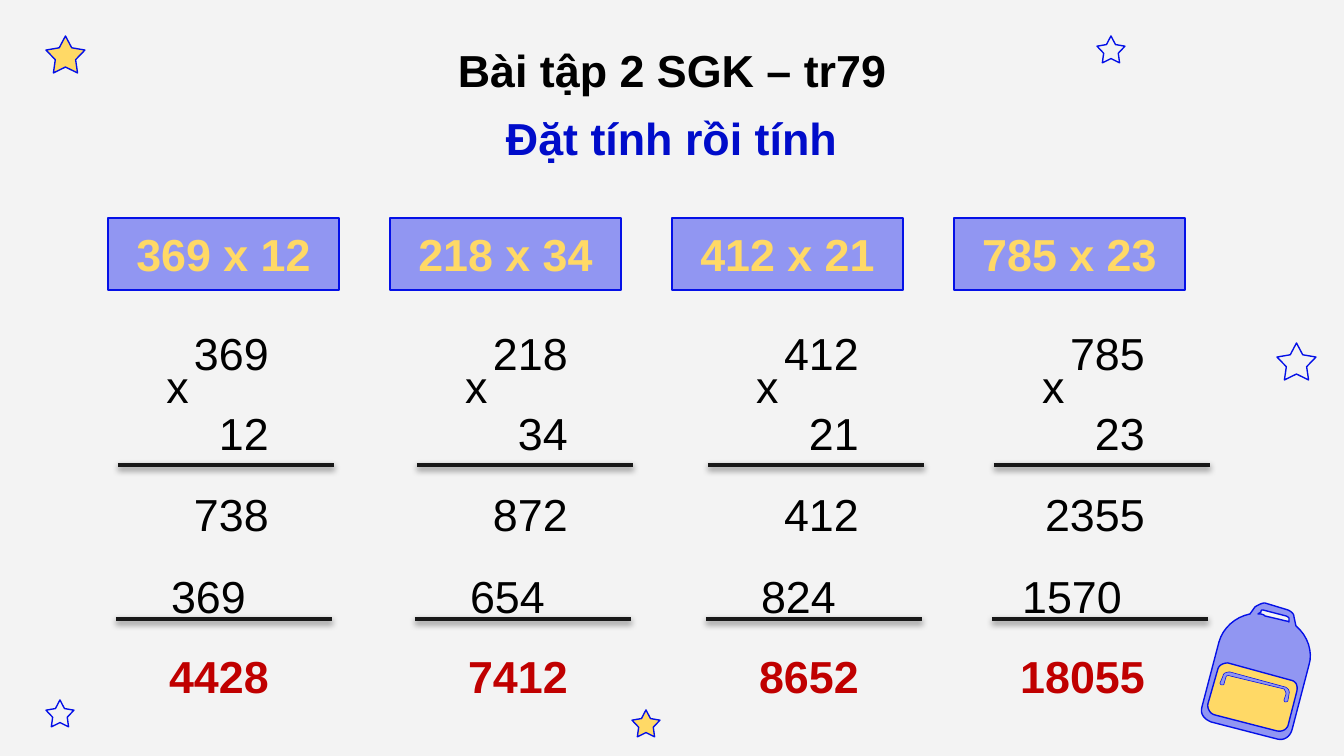
"""Build the slide that works four long multiplications in columns."""
from dataclasses import dataclass
from typing import NamedTuple

from lxml import etree
from pptx import Presentation
from pptx import util as u
from pptx.dml.color import RGBColor
from pptx.enum import shapes, text
from pptx.oxml import ns


@dataclass(frozen=True)
class Theme:
    font: str = "Arial"
    size: int = 24
    paper: str = "F3F3F3"
    ink: str = "000000"
    heading: str = "000CCA"
    outline: str = "0410E7"
    violet: str = "9196F2"
    yellow: str = "FFD966"
    rule: str = "181818"
    answer: str = "C00000"
    thin: float = 0.75
    thick: float = 2.5
    spacing: float = 1.5
    blank_row: float = 43.4


class Frame(NamedTuple):
    left: int
    top: int
    width: int
    height: int


class Star(NamedTuple):
    frame: Frame
    fill: str | None


class Problem(NamedTuple):
    left: int
    first: str
    second: str
    units: str
    tens: str
    answer: str


class Outline(NamedTuple):
    contours: list
    fill: str
    weight: float


THEME = Theme()
SLIDE = Frame(0, 0, 1344, 756)
SCALE = u.Inches(10) / SLIDE.width
CARD, CARD_STEP = Frame(108, 218, 231, 72), 282
LARGE, SMALL = (39, 37), (28, 27)
CURVE_STEPS = 8

STARS = [
    Star(Frame(46, 36, *LARGE), THEME.yellow),
    Star(Frame(46, 700, *SMALL), None),
    Star(Frame(1277, 343, *LARGE), None),
    Star(Frame(632, 710, *SMALL), THEME.yellow),
    Star(Frame(1097, 36, *SMALL), None),
]
PROBLEMS = [
    Problem(95, "369", "12", "738", "369", "4428"),
    Problem(394, "218", "34", "872", "654", "7412"),
    Problem(685, "412", "21", "412", "824", "8652"),
    Problem(971, "785", "23", "2355", "1570", "18055"),
]
HANDLE_GAP = [
    (1286, 616), (1288, 617, 1288, 617, 1289, 618), (1289, 622),
    (1288, 621, 1285, 621, 1282, 620), (1265, 616),
    (1263, 614, 1261, 614, 1258, 614), (1261, 612),
    (1261, 610, 1262, 610, 1263, 610),
]
BAG_BODY = [
    (1265, 603), (1262, 603, 1258, 605, 1255, 607), (1250, 614),
    (1235, 617, 1223, 628, 1219, 642), (1202, 707),
    (1200, 714, 1204, 719, 1211, 722), (1277, 739),
    (1284, 741, 1290, 737, 1292, 730), (1309, 665),
    (1313, 652, 1308, 636, 1296, 626), (1294, 617),
    (1294, 614, 1292, 612, 1288, 610),
]
POCKET = [
    (1228, 663), (1224, 663, 1219, 665, 1218, 669), (1208, 704),
    (1207, 708, 1210, 714, 1215, 715), (1277, 731),
    (1282, 732, 1286, 730, 1288, 726), (1297, 691),
    (1298, 685, 1296, 681, 1290, 680),
]
ZIP = [
    (1230, 672), (1227, 672, 1223, 673, 1223, 676), (1220, 683),
    (1220, 684, 1221, 685, 1222, 685), (1223, 685, 1224, 685, 1224, 684),
    (1226, 677), (1226, 676, 1228, 675, 1230, 676), (1284, 689),
    (1285, 691, 1286, 692, 1286, 694), (1284, 700),
    (1284, 701, 1285, 702, 1285, 702), (1286, 702, 1288, 702, 1288, 700),
    (1289, 694), (1290, 691, 1288, 688, 1285, 687),
]
BACKPACK = [
    Outline([HANDLE_GAP, BAG_BODY], THEME.violet, THEME.thin),
    Outline([POCKET], THEME.yellow, THEME.thin),
    Outline([ZIP], THEME.violet, 0.31),
]


def px(length: int) -> int:
    """Turn pixels into EMU."""
    return round(length * SCALE)


def emu(frame: Frame) -> list[int]:
    """Turn a frame into EMU lengths."""
    return [px(length) for length in frame]


def style(shape, fill: str | None, weight: float = THEME.thin) -> None:
    """Give a shape its fill and outline without a shadow."""
    shape.shadow.inherit = False
    if fill:
        shape.fill.solid()
        shape.fill.fore_color.rgb = RGBColor.from_string(fill)
    else:
        shape.fill.background()
    shape.line.color.rgb = RGBColor.from_string(THEME.outline)
    shape.line.width = u.Pt(weight)


def format_para(para, color: str, align, bold: bool = False) -> None:
    """Align a paragraph and format its runs."""
    para.alignment = align
    for span in para.runs:
        span.font.name, span.font.size = THEME.font, u.Pt(THEME.size)
        span.font.bold = bold
        span.font.color.rgb = RGBColor.from_string(color)


def write_heading(box, frame: Frame, words: str, color: str) -> None:
    """Place a centred bold heading."""
    box.left, box.top, box.width, box.height = emu(frame)
    box.text_frame.text = words
    box.text_frame.word_wrap = False
    box.text_frame.auto_size = text.MSO_AUTO_SIZE.NONE
    box.text_frame.vertical_anchor = text.MSO_ANCHOR.TOP
    format_para(box.text_frame.paragraphs[0], color, text.PP_ALIGN.CENTER, True)


def add_figures(slide, frame: Frame, rows: list[str]):
    """Add right-aligned rows of figures and return their paragraphs."""
    box = slide.shapes.add_textbox(*emu(frame))
    box.text_frame.word_wrap = True
    box.text_frame.text = "\n".join(rows)
    for para in box.text_frame.paragraphs:
        format_para(para, THEME.ink, text.PP_ALIGN.RIGHT)
        para.line_spacing = THEME.spacing
    return box.text_frame.paragraphs


def add_rule(slide, left: int, top: int, width: int = 216) -> None:
    """Add a thick horizontal rule with a soft shadow."""
    rule = slide.shapes.add_connector(
        shapes.MSO_CONNECTOR.STRAIGHT, px(left), px(top), px(left + width), px(top))
    rule.line.color.rgb = RGBColor.from_string(THEME.rule)
    rule.line.width = u.Pt(THEME.thick)
    effects = etree.SubElement(rule._element.spPr, ns.qn("a:effectLst"))
    shadow = etree.SubElement(effects, ns.qn("a:outerShdw"), blurRad="40000",
                              dist="20000", dir="5400000", rotWithShape="0")
    shade = etree.SubElement(shadow, ns.qn("a:srgbClr"), val="000000")
    etree.SubElement(shade, ns.qn("a:alpha"), val="38000")


def add_star(slide, star: Star) -> None:
    """Add a five-pointed star."""
    shape = slide.shapes.add_shape(shapes.MSO_SHAPE.STAR_5_POINT, *emu(star.frame))
    shape.adjustments[0] = 0.26
    style(shape, star.fill)


def flatten(contour: list) -> list[tuple[float, float]]:
    """Turn line and cubic segments into points."""
    points = [contour[0]]
    for segment in contour[1:]:
        if len(segment) == 2:
            points.append(segment)
            continue
        start = points[-1]
        for step in range(1, CURVE_STEPS + 1):
            t = step / CURVE_STEPS
            weights = ((1 - t) ** 3, 3 * t * (1 - t) ** 2, 3 * t * t * (1 - t), t ** 3)
            points.append(tuple(
                sum(w * p for w, p in zip(weights, (start[axis], *segment[axis::2])))
                for axis in (0, 1)))
    return points


def add_outline(slide, outline: Outline) -> None:
    """Add one closed part of the backpack."""
    contours = [[(px(x), px(y)) for x, y in flatten(c)] for c in outline.contours]
    builder = slide.shapes.build_freeform(*contours[0][0])
    for index, points in enumerate(contours):
        if index:
            builder.move_to(*points[0])
        builder.add_line_segments(points[1:], close=True)
    style(builder.convert_to_shape(), outline.fill, outline.weight)


def add_card(slide, index: int, problem: Problem) -> None:
    """Add the coloured card that states a problem."""
    frame = CARD._replace(left=CARD.left + index * CARD_STEP)
    card = slide.shapes.add_shape(shapes.MSO_SHAPE.RECTANGLE, *emu(frame))
    style(card, THEME.violet)
    card.text_frame.text = f"{problem.first} x {problem.second}"
    card.text_frame.vertical_anchor = text.MSO_ANCHOR.MIDDLE
    format_para(card.text_frame.paragraphs[0], THEME.yellow, text.PP_ALIGN.CENTER, True)


def add_working(slide, problem: Problem) -> None:
    """Add the column working of a problem."""
    left = problem.left
    rows = [problem.first, problem.second, problem.units, problem.answer]
    answer = add_figures(slide, Frame(left, 292, 187, 411), rows)[-1]
    answer.space_before = u.Pt(THEME.blank_row)
    format_para(answer, THEME.answer, text.PP_ALIGN.RIGHT, True)
    add_figures(slide, Frame(left + 58, 325, 46, 85), ["x"])
    add_figures(slide, Frame(left + 23, 535, 141, 85), [problem.tens])
    add_rule(slide, left + 23, 465)
    add_rule(slide, left + 21, 619)


def main() -> None:
    """Build and save the deck."""
    deck = Presentation()
    deck.slide_width, deck.slide_height = px(SLIDE.width), px(SLIDE.height)
    slide = deck.slides.add_slide(deck.slide_layouts[5])
    slide.background.fill.solid()
    slide.background.fill.fore_color.rgb = RGBColor.from_string(THEME.paper)
    for star in STARS:
        add_star(slide, star)
    for outline in BACKPACK:
        add_outline(slide, outline)
    write_heading(slide.shapes.title, Frame(442, 36, 460, 67),
                  "Bài tập 2 SGK – tr79", THEME.ink)
    subtitle = slide.shapes.add_textbox(0, 0, 0, 0)
    write_heading(subtitle, Frame(490, 104, 363, 67), "Đặt tính rồi tính", THEME.heading)
    for index, problem in enumerate(PROBLEMS):
        add_card(slide, index, problem)
    for problem in PROBLEMS:
        add_working(slide, problem)
    deck.save("out.pptx")


if __name__ == "__main__":
    main()
